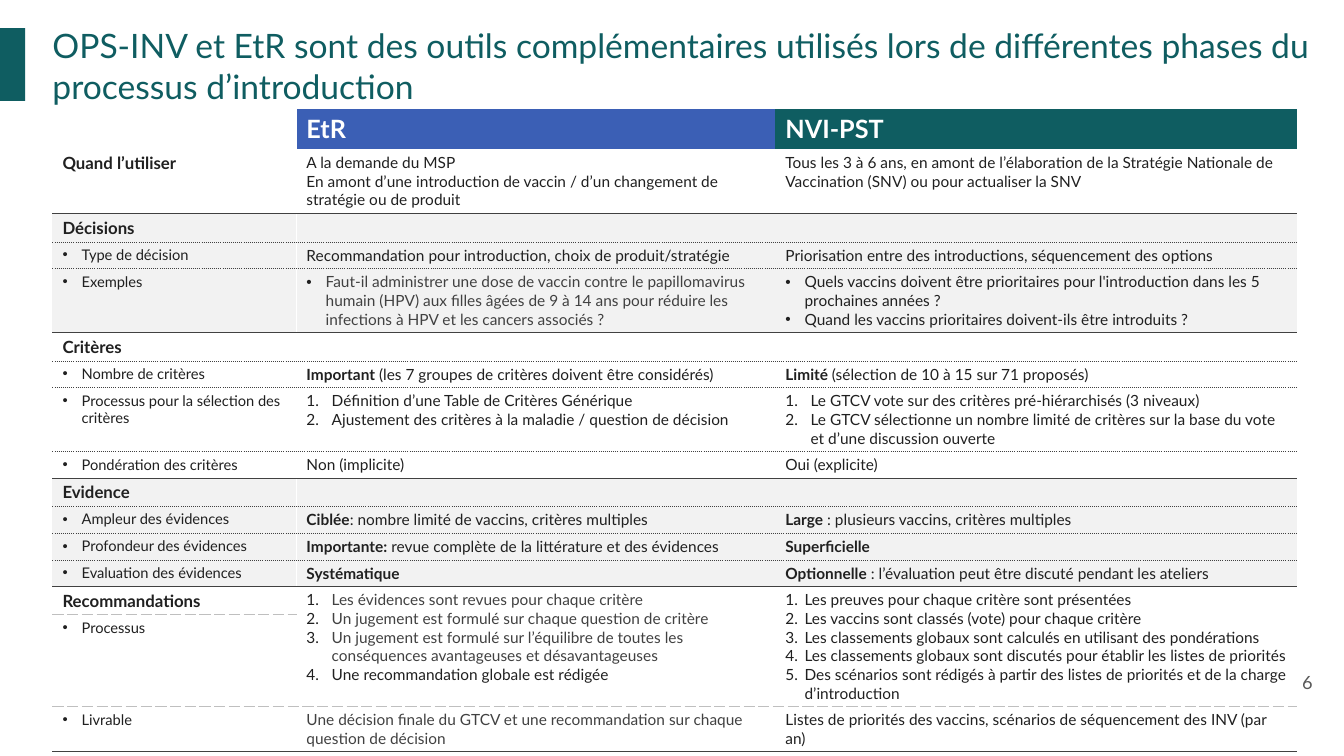
from dataclasses import dataclass

from lxml import etree
from pptx import Presentation
from pptx.dml.color import RGBColor
from pptx.enum.shapes import MSO_SHAPE
from pptx.enum.text import MSO_ANCHOR, MSO_AUTO_SIZE, PP_ALIGN
from pptx.oxml.ns import qn
from pptx.util import Inches, Pt

RECTANGLE = MSO_SHAPE.RECTANGLE
TOP, MIDDLE = MSO_ANCHOR.TOP, MSO_ANCHOR.MIDDLE
LEFT, RIGHT = PP_ALIGN.LEFT, PP_ALIGN.RIGHT
NO_AUTOFIT = MSO_AUTO_SIZE.NONE

TEAL = RGBColor(0x0F, 0x5D, 0x61)
BLUE = RGBColor(0x3B, 0x5F, 0xB5)
WHITE = RGBColor(0xFF, 0xFF, 0xFF)
PALE = RGBColor(0xF2, 0xF2, 0xF2)
INK = RGBColor(0x20, 0x20, 0x20)
GREY = RGBColor(0x41, 0x41, 0x41)
NUMBER_GREY = RGBColor(0x59, 0x59, 0x59)
DASH_GREY = RGBColor(0xBF, 0xBF, 0xBF)

# Rules: colour, width in points, dash
SOLID = (GREY, 0.75, "solid")
DOTTED = (GREY, 0.5, "sysDot")
DASHED = (DASH_GREY, 0.75, "sysDash")
GAP = (WHITE, 0.75, "solid")


@dataclass
class Entry:
    """Cell content; in a paragraph, the part before "|" is bold."""
    paragraphs: tuple = ("",)
    size: float = 11
    color: RGBColor = INK
    muted: int = 0  # leading paragraphs set in grey
    marker: str = ""  # "•" or "1."
    indent: float = 0.19
    right: float = 0.1
    pad: float = 0.04


def text(*paragraphs, **style):
    return Entry(paragraphs, **style)


def bullets(*paragraphs, **style):
    return Entry(paragraphs, marker="•", **style)


def steps(*paragraphs, indent=0.25, **style):
    return Entry(paragraphs, marker="1.", indent=indent, **style)


def heading(label):
    return text(label + "|", size=12)


def topic(label):
    return bullets(label, size=10.5)


def column_head(label):
    return text(label + "|", size=18, color=WHITE, pad=0.05)


EMPTY = Entry()
COLUMNS = (2.42, 4.75, 5.17)

# Each row: height, fill, rule below, entries
ROWS = [
    (0.4, WHITE, None, (EMPTY, column_head("EtR"), column_head("NVI-PST"))),
    (0.64, WHITE, SOLID, (
        heading("Quand l’utiliser"),
        text("A la demande du MSP",
             "En amont d’une introduction de vaccin / d’un changement de stratégie ou de produit"),
        text("Tous les 3 à 6 ans, en amont de l’élaboration de la Stratégie Nationale de "
             "Vaccination (SNV) ou pour actualiser la SNV"))),
    (0.28, PALE, DOTTED, (heading("Décisions"), EMPTY, EMPTY)),
    (0.26, PALE, DOTTED, (
        topic("Type de décision"),
        text("Recommandation pour introduction, choix de produit/stratégie"),
        text("Priorisation entre des introductions, séquencement des options"))),
    (0.63, PALE, SOLID, (
        topic("Exemples"),
        bullets("Faut-il administrer une dose de vaccin contre le papillomavirus humain (HPV) aux "
                "filles âgées de 9 à 14 ans pour réduire les infections à HPV et les cancers "
                "associés ?", muted=1),
        bullets("Quels vaccins doivent être prioritaires pour l'introduction dans les 5 "
                "prochaines années ?",
                "Quand les vaccins prioritaires doivent-ils être introduits ?"))),
    (0.28, WHITE, DOTTED, (heading("Critères"), EMPTY, EMPTY)),
    (0.26, WHITE, DOTTED, (
        topic("Nombre de critères"),
        text("Important |(les 7 groupes de critères doivent être considérés)"),
        text("Limité |(sélection de 10 à 15 sur 71 proposés)"))),
    (0.63, WHITE, DOTTED, (
        topic("Processus pour la sélection des critères"),
        steps("Définition d’une Table de Critères Générique",
              "Ajustement des critères à la maladie / question de décision"),
        steps("Le GTCV vote sur des critères pré-hiérarchisés (3 niveaux)",
              "Le GTCV sélectionne un nombre limité de critères sur la base du vote et d’une "
              "discussion ouverte"))),
    (0.26, WHITE, SOLID, (
        topic("Pondération des critères"), text("Non (implicite)"), text("Oui (explicite)"))),
    (0.28, PALE, DOTTED, (heading("Evidence"), EMPTY, EMPTY)),
    (0.26, PALE, DOTTED, (
        topic("Ampleur des évidences"),
        text("Ciblée|: nombre limité de vaccins, critères multiples"),
        text("Large| : plusieurs vaccins, critères multiples"))),
    (0.26, PALE, DOTTED, (
        topic("Profondeur des évidences"),
        text("Importante:| revue complète de la littérature et des évidences"),
        text("Superficielle|"))),
    (0.26, PALE, SOLID, (
        topic("Evaluation des évidences"),
        text("Systématique|"),
        text("Optionnelle| : l’évaluation peut être discuté pendant les ateliers"))),
    (0.28, WHITE, DASHED, (
        heading("Recommandations"),
        steps("Les évidences sont revues pour chaque critère",
              "Un jugement est formulé sur chaque question de critère",
              "Un jugement est formulé sur l’équilibre de toutes les conséquences avantageuses "
              "et désavantageuses",
              "Une recommandation globale est rédigée", muted=3),
        steps("Les preuves pour chaque critère sont présentées",
              "Les vaccins sont classés (vote) pour chaque critère",
              "Les classements globaux sont calculés en utilisant des pondérations",
              "Les classements globaux sont discutés pour établir les listes de priorités",
              "Des scénarios sont rédigés à partir des listes de priorités et de la charge "
              "d’introduction", indent=0.19, right=0))),
    (0.91, WHITE, DASHED, (topic("Processus"), EMPTY, EMPTY)),
    (0.45, WHITE, SOLID, (
        topic("Livrable"),
        text("Une décision finale du GTCV et une recommandation sur chaque question de décision",
             muted=1),
        text("Listes de priorités des vaccins, scénarios de séquencement des INV (par an)"))),
]
HEADER_FILLS = (WHITE, BLUE, TEAL)
MERGED_ROW = 13  # its last two columns run into the next row


class SlideBuilder:
    font_name = "Lato"

    def __init__(self, slide):
        self.slide = slide

    def style(self, run, size, color, bold=False):
        run.font.name, run.font.size, run.font.bold = self.font_name, Pt(size), bold
        run.font.color.rgb = color

    def frame(self, frame, margin, anchor):
        frame.word_wrap, frame.auto_size, frame.vertical_anchor = True, NO_AUTOFIT, anchor
        frame.margin_left = frame.margin_right = Inches(margin)
        frame.margin_top = frame.margin_bottom = Inches(margin)

    def title(self, wording, left, top, width, height):
        title = self.slide.shapes.title
        title.left, title.top = Inches(left), Inches(top)
        title.width, title.height = Inches(width), Inches(height)
        self.frame(title.text_frame, 0, TOP)
        title.text_frame.text = wording
        paragraph = title.text_frame.paragraphs[0]
        paragraph.alignment = LEFT
        self.style(paragraph.runs[0], 24, TEAL)

    def accent(self, *box):
        bar = self.slide.shapes.add_shape(RECTANGLE, *map(Inches, box))
        bar.shadow.inherit = False
        bar.fill.solid()
        bar.fill.fore_color.rgb = TEAL
        bar.line.fill.background()

    def page_number(self, number, *box):
        label = self.slide.shapes.add_textbox(*map(Inches, box))
        self.frame(label.text_frame, 0.13, MIDDLE)
        label.text_frame.text = number
        paragraph = label.text_frame.paragraphs[0]
        paragraph.alignment = RIGHT
        self.style(paragraph.runs[0], 13, NUMBER_GREY)

    def border(self, cell, side, rule):
        line = etree.SubElement(cell._tc.get_or_add_tcPr(), qn("a:ln" + side))
        if rule is None:
            etree.SubElement(line, qn("a:noFill"))
            return
        color, width, dash = rule
        line.set("w", str(Pt(width)))
        fill = etree.SubElement(line, qn("a:solidFill"))
        etree.SubElement(fill, qn("a:srgbClr"), val=str(color))
        etree.SubElement(line, qn("a:prstDash"), val=dash)

    def marker(self, paragraph, entry):
        props = paragraph._p.get_or_add_pPr()
        props.set("marL", str(Inches(entry.indent)))
        props.set("indent", str(-Inches(entry.indent)))
        color = etree.SubElement(props, qn("a:buClr"))
        etree.SubElement(color, qn("a:srgbClr"), val=str(INK))
        if entry.marker == "•":
            etree.SubElement(props, qn("a:buFont"), typeface="Arial")
            etree.SubElement(props, qn("a:buChar"), char="•")
        else:
            etree.SubElement(props, qn("a:buFont"), typeface="+mj-lt")
            etree.SubElement(props, qn("a:buAutoNum"), type="arabicPeriod")

    def fill_cell(self, cell, entry):
        cell.margin_left, cell.margin_right = Inches(0.1), Inches(entry.right)
        cell.margin_top = cell.margin_bottom = Inches(entry.pad)
        for index, wording in enumerate(entry.paragraphs):
            frame = cell.text_frame
            paragraph = frame.add_paragraph() if index else frame.paragraphs[0]
            if entry.marker:
                self.marker(paragraph, entry)
            lead, bar, rest = wording.partition("|")
            for part, bold in ((lead, bool(bar)), (rest, False)):
                if part:
                    run = paragraph.add_run()
                    run.text = part
                    self.style(run, entry.size, GREY if index < entry.muted else entry.color, bold)
            if not wording:
                etree.SubElement(paragraph._p, qn("a:endParaRPr"), sz=str(int(entry.size * 100)))

    def comparison(self, left, top):
        height = sum(row[0] for row in ROWS)
        table = self.slide.shapes.add_table(len(ROWS), len(COLUMNS), Inches(left), Inches(top),
                                            Inches(sum(COLUMNS)), Inches(height)).table
        table.horz_banding = False
        for column, width in zip(table.columns, COLUMNS):
            column.width = Inches(width)
        above = None
        for r, (height, fill, below, entries) in enumerate(ROWS):
            table.rows[r].height = Inches(height)
            for c, entry in enumerate(entries):
                cell = table.cell(r, c)
                self.fill_cell(cell, entry)
                inside_merge = c > 0
                self.border(cell, "L", GAP if c == 1 else None)
                self.border(cell, "R", GAP if c == 0 else None)
                self.border(cell, "T", None if inside_merge and r == MERGED_ROW + 1 else above)
                self.border(cell, "B", None if inside_merge and r == MERGED_ROW else below)
                cell.fill.solid()
                cell.fill.fore_color.rgb = HEADER_FILLS[c] if r == 0 else fill
            above = below
        for c in (1, 2):
            table.cell(MERGED_ROW, c).merge(table.cell(MERGED_ROW + 1, c))


def main():
    deck = Presentation()
    deck.slide_width, deck.slide_height = Inches(13.33), Inches(7.5)
    builder = SlideBuilder(deck.slides.add_slide(deck.slide_layouts[5]))
    builder.accent(-0.01, 0.28, 0.26, 0.72)
    builder.title("OPS-INV et EtR sont des outils complémentaires utilisés lors de différentes "
                  "phases du processus d’introduction", 0.52, 0.25, 12.55, 0.8)
    builder.page_number("6", 12.35, 6.48, 0.8, 0.57)
    builder.comparison(0.52, 1.08)
    deck.save("out.pptx")


if __name__ == "__main__":
    main()
